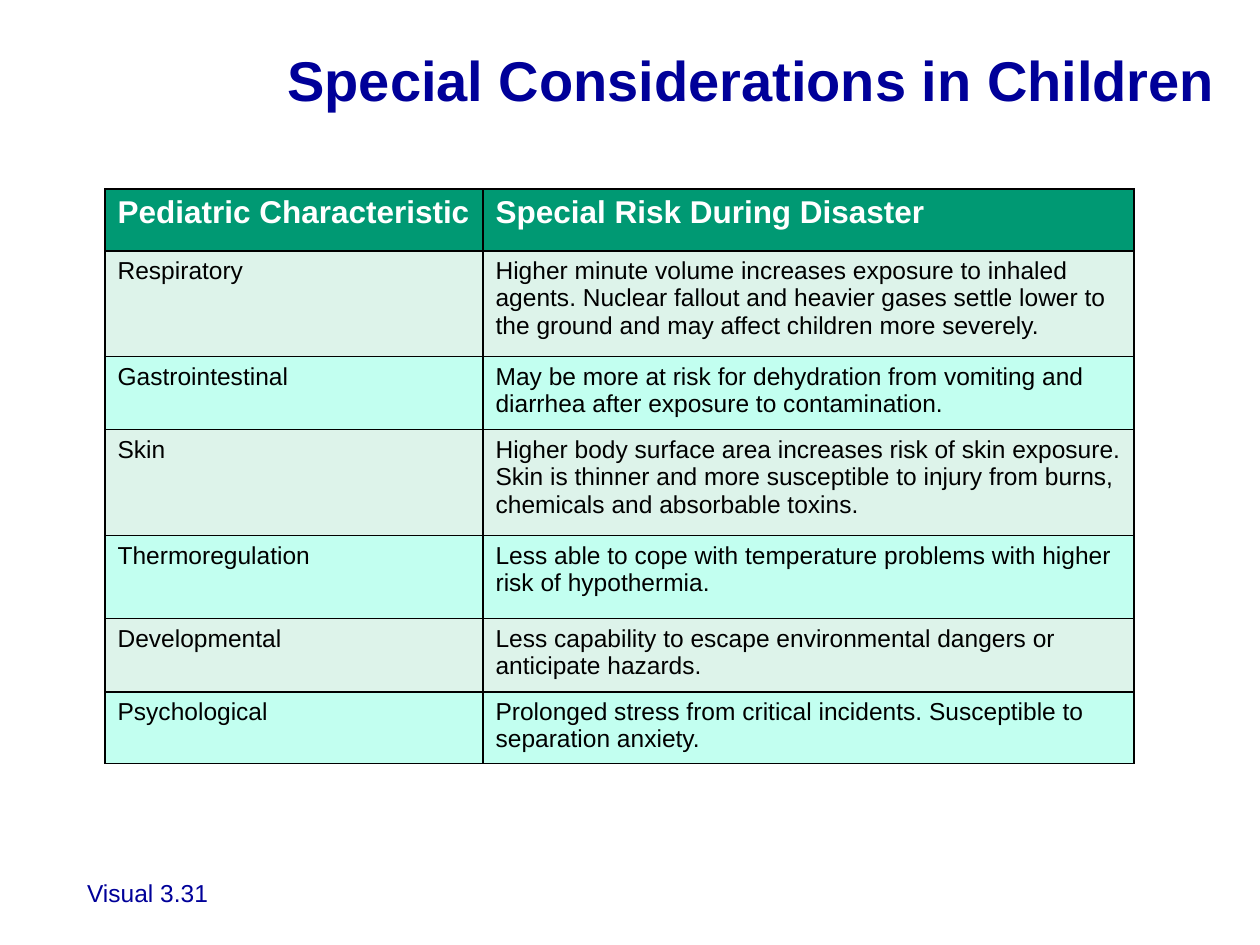
from lxml import etree
from pptx import Presentation
from pptx.dml.color import RGBColor
from pptx.enum.text import MSO_ANCHOR, PP_ALIGN
from pptx.oxml.ns import qn
from pptx.util import Pt

RIGHT, LEFT = PP_ALIGN.RIGHT, PP_ALIGN.LEFT
TOP, MIDDLE = MSO_ANCHOR.TOP, MSO_ANCHOR.MIDDLE

NAVY, WHITE, BLACK = "000099", "FFFFFF", "000000"
HEADER_FILL = "009973"
BAND_FILLS = ("DDF3EA", "C2FFF0")

COLUMN_WIDTHS = (216, 372)
ROW_HEIGHTS = (35.3, 60.5, 41.8, 60.5, 47.5, 41.8, 41)
ROWS = (
    ("Pediatric Characteristic", "Special Risk During Disaster"),
    ("Respiratory",
     "Higher minute volume increases exposure to inhaled agents. Nuclear fallout and "
     "heavier gases settle lower to the ground and may affect children more severely."),
    ("Gastrointestinal",
     "May be more at risk for dehydration from vomiting and diarrhea after exposure "
     "to contamination."),
    ("Skin",
     "Higher body surface area increases risk of skin exposure. Skin is thinner and "
     "more susceptible to injury from burns, chemicals and absorbable toxins."),
    ("Thermoregulation",
     "Less able to cope with temperature problems with higher risk of hypothermia."),
    ("Developmental",
     "Less capability to escape environmental dangers or anticipate hazards."),
    ("Psychological",
     "Prolonged stress from critical incidents. Susceptible to separation anxiety."),
)


def rgb(value):
    """Return the colour for a hex string."""
    return RGBColor.from_string(value)


def write(tf, text, size, color, bold=False, align=LEFT):
    """Put one formatted paragraph in a text frame."""
    tf.word_wrap = True
    p = tf.paragraphs[0]
    p.text = text
    p.alignment = align
    p.font.name = "Arial"
    p.font.size = Pt(size)
    p.font.bold = bold
    p.font.color.rgb = rgb(color)


def add_title(slide, text, left, top, width, height):
    """Place and format the title placeholder."""
    sp = slide.shapes.title
    sp.left, sp.top, sp.width, sp.height = Pt(left), Pt(top), Pt(width), Pt(height)
    sp.text_frame.vertical_anchor = MIDDLE
    write(sp.text_frame, text, 32, NAVY, bold=True, align=RIGHT)


def add_label(slide, text, left, top, width, height):
    """Add a right-aligned text box."""
    sp = slide.shapes.add_textbox(Pt(left), Pt(top), Pt(width), Pt(height))
    write(sp.text_frame, text, 14, NAVY, align=RIGHT)


def set_borders(cell, color, width):
    """Draw a solid line on all four sides of a cell."""
    tc_pr = cell._tc.get_or_add_tcPr()
    for side in ("a:lnL", "a:lnR", "a:lnT", "a:lnB"):
        ln = etree.SubElement(tc_pr, qn(side), w=str(Pt(width)))
        fill = etree.SubElement(ln, qn("a:solidFill"))
        etree.SubElement(fill, qn("a:srgbClr"), val=color)


def format_cell(cell, text, row):
    """Fill a cell with text and the style of its row."""
    header = row == 0
    set_borders(cell, BLACK, 1)
    cell.fill.solid()
    cell.fill.fore_color.rgb = rgb(HEADER_FILL if header else BAND_FILLS[(row - 1) % 2])
    cell.vertical_anchor = TOP
    write(cell.text_frame, text, 18 if header else 14, WHITE if header else BLACK, bold=header)


def add_risk_table(slide, left, top):
    """Add the table of characteristics and risks."""
    table = slide.shapes.add_table(
        len(ROWS), len(COLUMN_WIDTHS), Pt(left), Pt(top),
        Pt(sum(COLUMN_WIDTHS)), Pt(sum(ROW_HEIGHTS))).table
    table.first_row = table.horz_banding = False
    for column, width in zip(table.columns, COLUMN_WIDTHS):
        column.width = Pt(width)
    for r, (height, texts) in enumerate(zip(ROW_HEIGHTS, ROWS)):
        table.rows[r].height = Pt(height)
        for c, text in enumerate(texts):
            format_cell(table.cell(r, c), text, r)


def main():
    """Build and save the slide."""
    prs = Presentation()
    prs.slide_width, prs.slide_height = Pt(720), Pt(540)
    slide = prs.slides.add_slide(prs.slide_layouts[5])
    add_label(slide, "Visual 3.31", -6, 498, 132, 24)
    add_title(slide, "Special Considerations in Children", 156, 18, 546, 54)
    add_risk_table(slide, 60, 108)
    prs.save("out.pptx")


if __name__ == "__main__":
    main()
